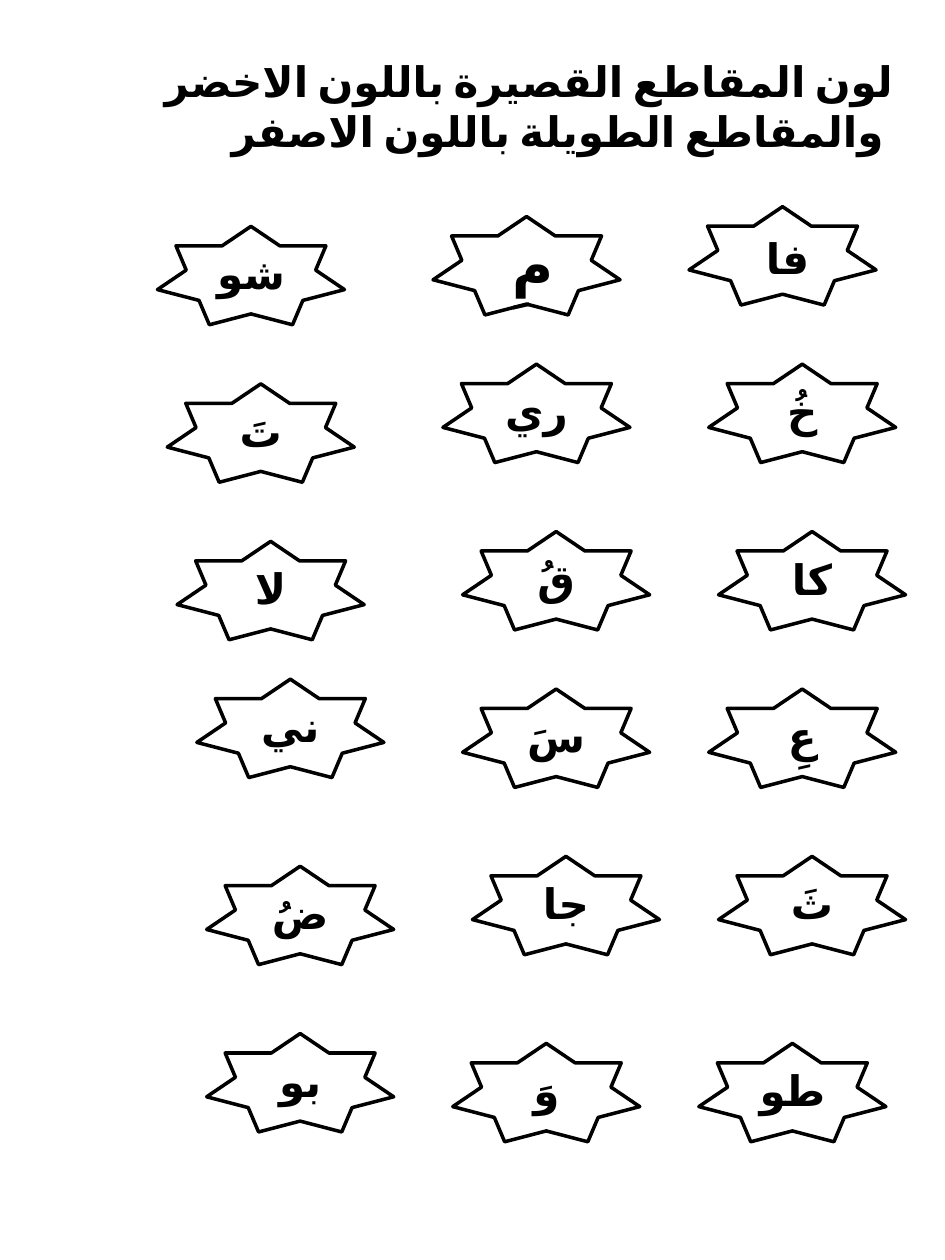
"""Build an Arabic worksheet of short and long syllables inside seven-point stars."""
import pptx
import pptx.dml.color
import pptx.enum.lang
import pptx.enum.shapes
import pptx.enum.text
import pptx.oxml.ns
import pptx.util
import lxml.etree

Pt = pptx.util.Pt
ALIGN = pptx.enum.text.PP_ALIGN
COLORS = {"ink": "000000", "paper": "FFFFFF"}
FONT = "Calibri"
SIZE = 24
UNIT = 5.625
STAR_SIZE = (19, 10)

TITLE = ["لون المقاطع القصيرة باللون الاخضر", " والمقاطع الطويلة باللون الاصفر "]
LABEL = ("فا", 75, 23)
STARS = [
    [("", 70, 21), ("مِ ", 44, 22), ("شو", 16, 23)],
    [("خُ", 72, 37), ("ري", 45, 37), ("تَ", 17, 39)],
    [("كا", 73, 54), ("قُ", 47, 54), ("لا", 18, 55)],
    [("عِ", 72, 70), ("سَ", 47, 70), ("ني", 20, 69)],
    [("ثَ", 73, 87), ("جا", 48, 87), ("ضُ", 21, 88)],
    [("طو", 71, 106), ("وَ", 46, 106), ("بو", 21, 105)],
]
SIZES = {"مِ ": 32}


def rgb(name):
    return pptx.dml.color.RGBColor.from_string(COLORS[name])


def grid(*units):
    return [Pt(u * UNIT) for u in units]


def write(tf, lines, align):
    tf.word_wrap = True
    for i, text in enumerate(lines):
        p = tf.paragraphs[0] if i == 0 else tf.add_paragraph()
        p.alignment = align
        p._p.get_or_add_pPr().set("rtl", "1")
        r = p.add_run()
        r.text = text
        r.font.name = FONT
        r.font.size = Pt(SIZES.get(text, SIZE))
        r.font.bold = True
        r.font.color.rgb = rgb("ink")
        r.font.language_id = pptx.enum.lang.MSO_LANGUAGE_ID.ARABIC
        props = r._r.get_or_add_rPr()
        lxml.etree.SubElement(props, pptx.oxml.ns.qn("a:cs")).set("typeface", FONT)


def add_text(slide, box, lines, align):
    tf = slide.shapes.add_textbox(*box).text_frame
    write(tf, lines, align)
    tf.auto_size = pptx.enum.text.MSO_AUTO_SIZE.SHAPE_TO_FIT_TEXT


def add_star(slide, text, x, y):
    sp = slide.shapes.add_shape(
        pptx.enum.shapes.MSO_SHAPE.STAR_7_POINT, *grid(x, y, *STAR_SIZE))
    sp.shadow.inherit = False
    sp.fill.solid()
    sp.fill.fore_color.rgb = rgb("paper")
    sp.line.color.rgb = rgb("ink")
    sp.line.width = Pt(2)
    if text:
        sp.text_frame.vertical_anchor = pptx.enum.text.MSO_ANCHOR.MIDDLE
        write(sp.text_frame, [text], ALIGN.CENTER)


def main():
    prs = pptx.Presentation()
    prs.slide_width, prs.slide_height = Pt(540), Pt(720)
    slide = prs.slides.add_slide(prs.slide_layouts[6])
    add_text(slide, grid(0, 5, 92) + [Pt(65.5)], TITLE, ALIGN.RIGHT)
    for row in STARS:
        for star in row:
            add_star(slide, *star)
    text, x, y = LABEL
    add_text(slide, grid(x, y, 10) + [Pt(36)], [text], ALIGN.CENTER)
    prs.save("out.pptx")


if __name__ == "__main__":
    main()
